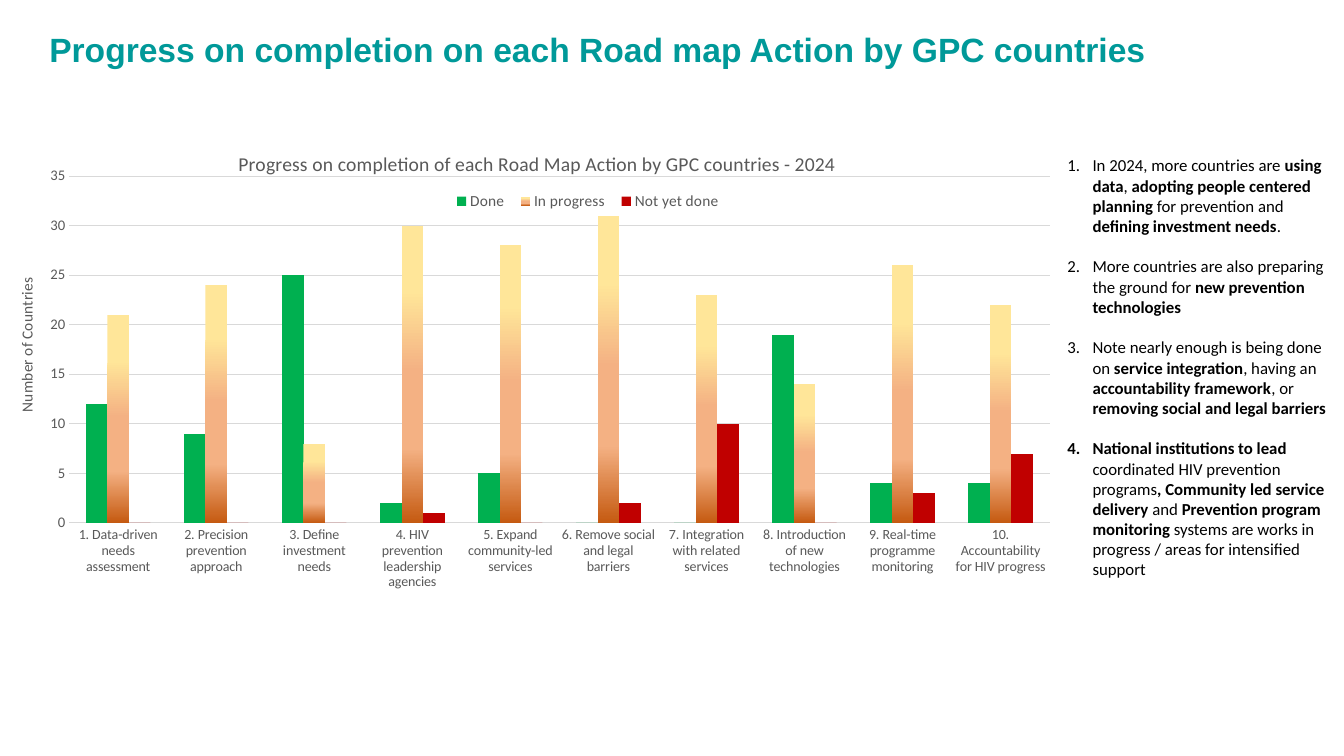
from lxml import etree
from pptx import Presentation
from pptx.chart.data import CategoryChartData
from pptx.dml.color import RGBColor
from pptx.enum.chart import XL_CHART_TYPE, XL_LEGEND_POSITION, XL_TICK_MARK
from pptx.enum.text import MSO_ANCHOR, MSO_AUTO_SIZE, PP_ALIGN
from pptx.oxml import parse_xml
from pptx.oxml.ns import nsdecls, qn
from pptx.util import Pt

COLUMNS = XL_CHART_TYPE.COLUMN_CLUSTERED
BOTTOM = XL_LEGEND_POSITION.BOTTOM
NO_TICK = XL_TICK_MARK.NONE

COLORS = {
    "title": "009999", "text": "000000", "label": "595959", "grid": "D9D9D9",
    "done": "00B050", "not_done": "C00000",
    "pale": "FFE699", "peach": "F4B183", "rust": "C55A11",
}


def set_font(font, size, color, bold=False, name="Calibri"):
    font.name = name
    font.size = Pt(size)
    font.bold = bold
    font.color.rgb = RGBColor.from_string(COLORS[color])


def place(element, x, y, w=None, h=None, inner=False):
    """Fix a chart part at fractions of the chart's size."""
    for old in element.findall(qn("c:layout")):
        element.remove(old)
    layout = etree.Element(qn("c:layout"))
    manual = etree.SubElement(layout, qn("c:manualLayout"))
    entries = [("layoutTarget", "inner")] if inner else []
    entries += [("xMode", "edge"), ("yMode", "edge"), ("x", x), ("y", y)]
    if w is not None:
        entries += [("w", w), ("h", h)]
    for tag, value in entries:
        etree.SubElement(manual, qn("c:" + tag)).set("val", str(value))
    overlay = element.find(qn("c:overlay"))
    if overlay is None:
        element.insert(0, layout)
    else:
        overlay.addprevious(layout)


deck = Presentation()
deck.slide_width = Pt(960)
deck.slide_height = Pt(540)
page = deck.slides.add_slide(deck.slide_layouts[5])

# Title
title = page.shapes.title
title.left, title.top, title.width, title.height = Pt(28), Pt(14.4), Pt(893.5), Pt(39)
frame = title.text_frame
frame.auto_size = MSO_AUTO_SIZE.NONE
frame.vertical_anchor = MSO_ANCHOR.BOTTOM
para = frame.paragraphs[0]
para.alignment = PP_ALIGN.LEFT
span = para.add_run()
span.text = "Progress on completion on each Road map Action by GPC countries"
set_font(span.font, 24, "title", True, "Arial")

# Chart data
data = CategoryChartData()
data.categories = [
    "1. Data-driven needs assessment", "2. Precision prevention approach",
    "3. Define investment needs", "4. HIV prevention leadership agencies",
    "5. Expand community-led services", "6. Remove social and legal barriers",
    "7. Integration with related services", "8. Introduction of new technologies",
    "9. Real-time programme monitoring", "10. Accountability for HIV progress",
]
data.add_series("Done", [12, 9, 25, 2, 5, 0, 0, 19, 4, 4])
data.add_series("In progress", [21, 24, 8, 30, 28, 31, 23, 14, 26, 22])
data.add_series("Not yet done", [0, 0, 0, 1, 0, 2, 10, 0, 3, 7])
chart = page.shapes.add_chart(COLUMNS, Pt(2), Pt(91), Pt(753), Pt(351.5), data).chart
set_font(chart.font, 10, "text")
place(chart._chartSpace.chart.plotArea, 0.063, 0.099, 0.93, 0.705, inner=True)

# Columns
plot = chart.plots[0]
plot.gap_width = 156
plot.overlap = 1
plot.vary_by_categories = False
done, in_progress, not_done = plot.series
for series, color in ((done, "done"), (not_done, "not_done")):
    series.format.fill.solid()
    series.format.fill.fore_color.rgb = RGBColor.from_string(COLORS[color])
stops = "".join(
    f'<a:gs pos="{percent * 1000}"><a:srgbClr val="{COLORS[color]}"/></a:gs>'
    for percent, color in ((22, "pale"), (49, "peach"), (75, "peach"), (100, "rust")))
in_progress.format.fill.background()
no_fill = in_progress._element.spPr.find(qn("a:noFill"))
no_fill.getparent().replace(no_fill, parse_xml(
    f'<a:gradFill {nsdecls("a")} rotWithShape="1"><a:gsLst>{stops}</a:gsLst>'
    '<a:lin ang="5400000" scaled="0"/></a:gradFill>'))

# Axes
actions, countries = chart.category_axis, chart.value_axis
for axis, size in ((actions, 10), (countries, 10.5)):
    axis.major_tick_mark = axis.minor_tick_mark = NO_TICK
    set_font(axis.tick_labels.font, size, "label")
countries.minimum_scale, countries.maximum_scale, countries.major_unit = 0, 35, 5
countries.format.line.fill.background()
for line in (actions.format.line, countries.major_gridlines.format.line):
    line.color.rgb = RGBColor.from_string(COLORS["grid"])
    line.width = Pt(0.75)

# Chart title, axis title and legend
captions = (
    (chart.chart_title, "Progress on completion of each Road Map Action by GPC countries - 2024",
     14, 0.22, 0.04),
    (countries.axis_title, "Number of Countries", 11, 0.01, 0.3),
)
for caption, text, size, x, y in captions:
    span = caption.text_frame.paragraphs[0].add_run()
    span.text = text
    set_font(span.font, size, "label")
    place(caption._element, x, y)
chart.has_legend = True
chart.legend.position = BOTTOM
chart.legend.include_in_layout = False
set_font(chart.legend.font, 11, "label")
place(chart.legend._element, 0.42, 0.12, 0.27, 0.06)

# Numbered findings; True marks bold text
findings = [
    [("In 2024, more countries are ", False), ("using data", True), (", ", False),
     ("adopting people centered planning ", True), ("for prevention and ", False),
     ("defining investment needs", True), (".", False)],
    [("More countries are also preparing the ground for ", False),
     ("new prevention technologies", True)],
    [("Note nearly enough is being done on ", False), ("service integration", True),
     (", having an ", False), ("accountability framework", True), (", or ", False),
     ("removing social and legal barriers", True)],
    [("National institutions to lead ", True), ("coordinated HIV prevention programs", False),
     (", Community led service delivery ", True), ("and ", False),
     ("Prevention program monitoring", True),
     (" systems are works in progress / areas for intensified support", False)],
]
box = page.shapes.add_textbox(Pt(755.3), Pt(107.3), Pt(206), Pt(312.5))
frame = box.text_frame
frame.word_wrap = True
for index, finding in enumerate(findings):
    para = frame.add_paragraph() if index else frame.paragraphs[0]
    properties = para._p.get_or_add_pPr()
    properties.set("marL", str(Pt(18)))
    properties.set("indent", str(Pt(-18)))
    etree.SubElement(properties, qn("a:buFont")).set("typeface", "+mj-lt")
    etree.SubElement(properties, qn("a:buAutoNum")).set("type", "arabicPeriod")
    if index:
        para.space_before = Pt(14.6)
    for text, bold in finding:
        span = para.add_run()
        span.text = text
        set_font(span.font, 12, "text", bold)

deck.save("out.pptx")
